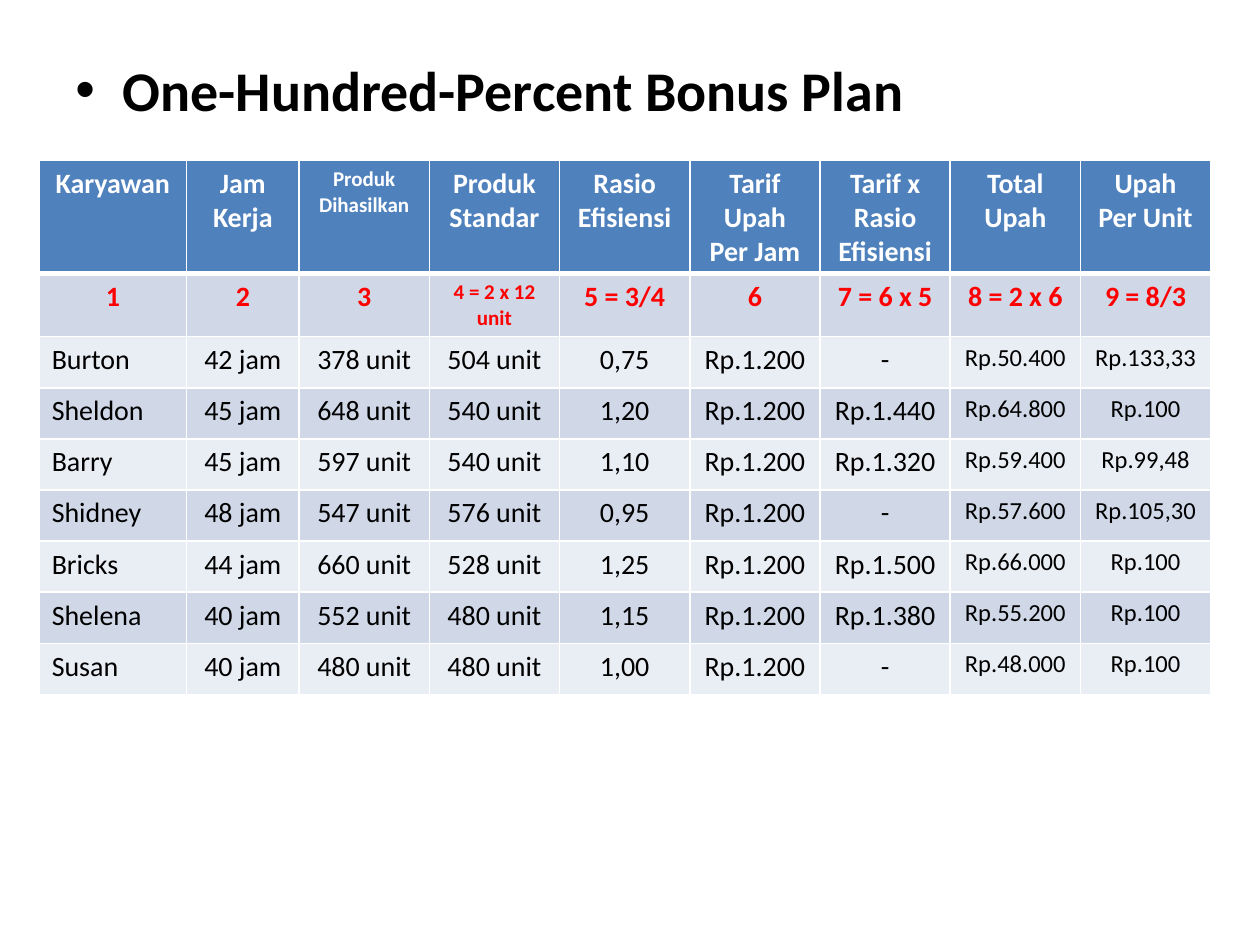
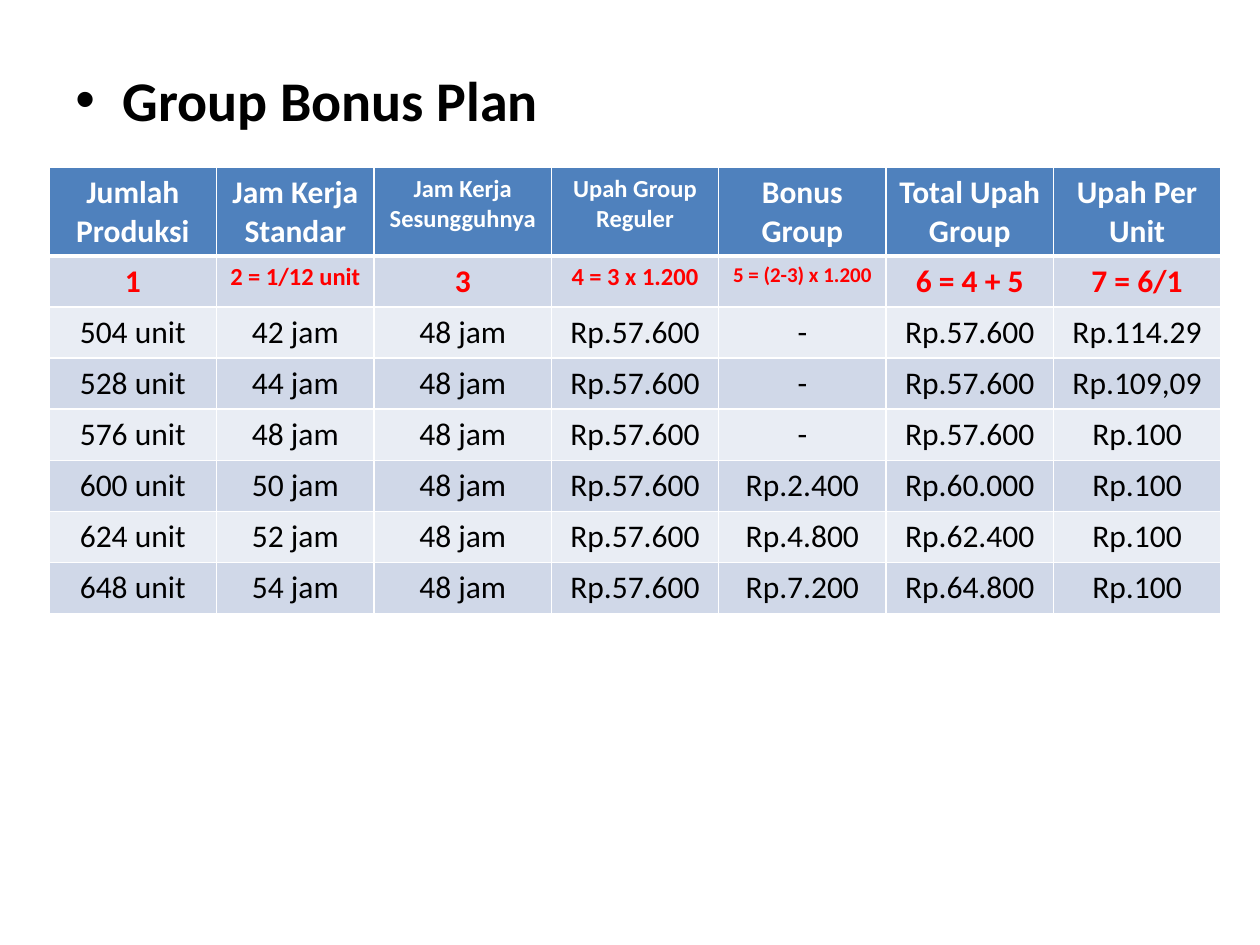
import pptx
import pptx.dml.color
import pptx.enum.text
import pptx.oxml
import pptx.oxml.ns
import pptx.util
from pptx.util import Cm

# Content: (row, column) and column numbers start at 0, lengths are in cm
BONUS_PLANS = [
    {
        "title": "One-Hundred-Percent Bonus Plan",
        "title_top": 0.99,
        "table_place": (0.79, 3.23, 23.62, 10.77),
        "special_widths": {0: 2.97, 1: 2.27},
        "left_aligned_columns": [0],
        "base_size": 16,
        "cell_sizes": {(0, 2): 12, (1, 3): 12},
        "body_column_sizes": {7: 14, 8: 14},
        "rows": [
            ("Karyawan", "Jam Kerja", "Produk Dihasilkan", "Produk Standar", "Rasio Efisiensi",
             "Tarif Upah Per Jam", "Tarif x Rasio Efisiensi", "Total Upah", "Upah Per Unit"),
            ("1", "2", "3", "4 = 2 x 12 unit", "5 = 3/4", "6", "7 = 6 x 5", "8 = 2 x 6", "9 = 8/3"),
            ("Burton", "42 jam", "378 unit", "504 unit", "0,75", "Rp.1.200", "-", "Rp.50.400", "Rp.133,33"),
            ("Sheldon", "45 jam", "648 unit", "540 unit", "1,20", "Rp.1.200", "Rp.1.440", "Rp.64.800", "Rp.100"),
            ("Barry", "45 jam", "597 unit", "540 unit", "1,10", "Rp.1.200", "Rp.1.320", "Rp.59.400", "Rp.99,48"),
            ("Shidney", "48 jam", "547 unit", "576 unit", "0,95", "Rp.1.200", "-", "Rp.57.600", "Rp.105,30"),
            ("Bricks", "44 jam", "660 unit", "528 unit", "1,25", "Rp.1.200", "Rp.1.500", "Rp.66.000", "Rp.100"),
            ("Shelena", "40 jam", "552 unit", "480 unit", "1,15", "Rp.1.200", "Rp.1.380", "Rp.55.200", "Rp.100"),
            ("Susan", "40 jam", "480 unit", "480 unit", "1,00", "Rp.1.200", "-", "Rp.48.000", "Rp.100"),
        ],
    },
    {
        "title": "Group Bonus Plan",
        "title_top": 1.19,
        "table_place": (0.99, 3.38, 23.62, 8.99),
        "special_widths": {1: 3.18, 2: 3.57},
        "left_aligned_columns": [],
        "base_size": 18,
        "cell_sizes": {(0, 2): 14, (0, 3): 14, (1, 1): 14, (1, 3): 14, (1, 4): 12},
        "body_column_sizes": {},
        "rows": [
            ("Jumlah Produksi", "Jam Kerja Standar", "Jam Kerja Sesungguhnya", "Upah Group Reguler",
             "Bonus Group", "Total Upah Group", "Upah Per Unit"),
            ("1", "2 = 1/12 unit", "3", "4 = 3 x 1.200", "5 = (2-3) x 1.200", "6 = 4 + 5", "7 = 6/1"),
            ("504 unit", "42 jam", "48 jam", "Rp.57.600", "-", "Rp.57.600", "Rp.114.29"),
            ("528 unit", "44 jam", "48 jam", "Rp.57.600", "-", "Rp.57.600", "Rp.109,09"),
            ("576 unit", "48 jam", "48 jam", "Rp.57.600", "-", "Rp.57.600", "Rp.100"),
            ("600 unit", "50 jam", "48 jam", "Rp.57.600", "Rp.2.400", "Rp.60.000", "Rp.100"),
            ("624 unit", "52 jam", "48 jam", "Rp.57.600", "Rp.4.800", "Rp.62.400", "Rp.100"),
            ("648 unit", "54 jam", "48 jam", "Rp.57.600", "Rp.7.200", "Rp.64.800", "Rp.100"),
        ],
    },
]

# Shared look
COLOURS = {
    "text": "000000",
    "header_text": "FFFFFF",
    "formula_text": "FF0000",
    "border": "FFFFFF",
    "header_fill": "4F81BD",
    "dark_band": "D0D8E8",
    "light_band": "E9EDF4",
}
FONT = "Calibri"
TITLE_LEFT, TITLE_WIDTH, TITLE_HEIGHT = 1.27, 22.86, 1.8
TITLE_SIZE = 32
BULLET_INDENT = 0.95
ROW_HEIGHT = 1.03
THIN, THICK = 1, 3
ALIGN = pptx.enum.text.PP_ALIGN


def add_span(para, text, size, colour, bold):
    span = para.add_run()
    span.text = text
    formats = {"name": FONT, "size": pptx.util.Pt(size), "bold": bold}
    for name, value in formats.items():
        setattr(span.font, name, value)
    span.font.color.rgb = pptx.dml.color.RGBColor.from_string(COLOURS[colour])


def add_title(page, text, top):
    box = page.shapes.add_textbox(Cm(TITLE_LEFT), Cm(top), Cm(TITLE_WIDTH), Cm(TITLE_HEIGHT))
    box.text_frame.word_wrap = True
    para = box.text_frame.paragraphs[0]
    para.space_before = pptx.util.Pt(0.2 * TITLE_SIZE)
    add_span(para, text, TITLE_SIZE, "text", True)

    # Hanging bullet
    properties = para._p.get_or_add_pPr()
    properties.set("marL", str(Cm(BULLET_INDENT)))
    properties.set("indent", str(-Cm(BULLET_INDENT)))
    for tag, name, value in (("a:buFont", "typeface", "Arial"), ("a:buChar", "char", "•")):
        bullet = pptx.oxml.parse_xml(f'<{tag} {pptx.oxml.ns.nsdecls("a")} {name}="{value}"/>')
        properties.append(bullet)


def add_borders(cell, row):
    widths = {"L": THIN, "R": THIN,
              "T": THICK if row == 1 else THIN,
              "B": THICK if row == 0 else THIN}
    properties = cell._tc.get_or_add_tcPr()
    for side, width in widths.items():
        properties.append(pptx.oxml.parse_xml(
            f'<a:ln{side} {pptx.oxml.ns.nsdecls("a")} w="{pptx.util.Pt(width)}">'
            f'<a:solidFill><a:srgbClr val="{COLOURS["border"]}"/></a:solidFill></a:ln{side}>'))


def row_style(row):
    """Return fill, text colour and bold for a table row."""
    if row == 0:
        return "header_fill", "header_text", True
    if row == 1:
        return "dark_band", "formula_text", True
    return ("dark_band" if row % 2 else "light_band"), "text", False


def cell_size(plan, row, column):
    size = plan["base_size"]
    if row > 1:
        size = plan["body_column_sizes"].get(column, size)
    return plan["cell_sizes"].get((row, column), size)


def add_wage_table(page, plan):
    rows, special = plan["rows"], plan["special_widths"]
    left, top, width, height = plan["table_place"]
    column_count = len(rows[0])
    frame = page.shapes.add_table(len(rows), column_count, Cm(left), Cm(top), Cm(width), Cm(height))
    table = frame.table

    # Columns without a special width share the rest equally
    shared_width = (width - sum(special.values())) / (column_count - len(special))
    for index, column in enumerate(table.columns):
        column.width = Cm(special.get(index, shared_width))
    for table_row in table.rows:
        table_row.height = Cm(ROW_HEIGHT)
    frame.height = Cm(height)

    for row, texts in enumerate(rows):
        fill, colour, bold = row_style(row)
        for column, text in enumerate(texts):
            cell = table.cell(row, column)
            add_borders(cell, row)
            cell.fill.solid()
            cell.fill.fore_color.rgb = pptx.dml.color.RGBColor.from_string(COLOURS[fill])
            para = cell.text_frame.paragraphs[0]
            is_name = row > 1 and column in plan["left_aligned_columns"]
            para.alignment = ALIGN.LEFT if is_name else ALIGN.CENTER
            add_span(para, text, cell_size(plan, row, column), colour, bold)


def main():
    deck = pptx.Presentation()
    deck.slide_width, deck.slide_height = Cm(25.4), Cm(19.05)
    for plan in BONUS_PLANS:
        page = deck.slides.add_slide(deck.slide_layouts[6])
        add_title(page, plan["title"], plan["title_top"])
        add_wage_table(page, plan)
    deck.save("out.pptx")


if __name__ == "__main__":
    main()
